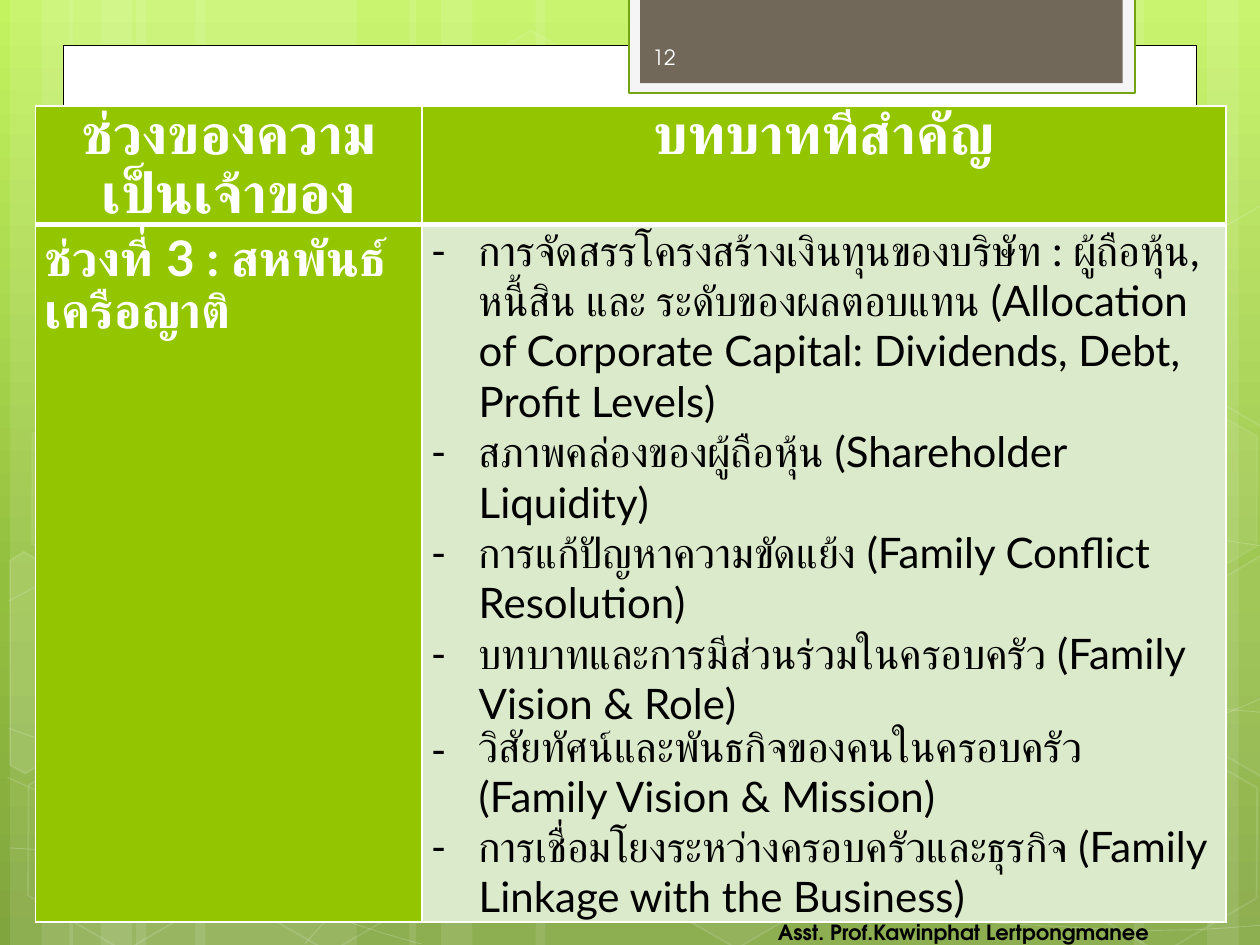
from lxml import etree
from pptx import Presentation
from pptx.dml.color import RGBColor
from pptx.enum.shapes import MSO_SHAPE
from pptx.enum.text import MSO_ANCHOR, PP_ALIGN
from pptx.oxml.ns import qn
from pptx.util import Inches, Pt

RECTANGLE, HEXAGON = MSO_SHAPE.RECTANGLE, MSO_SHAPE.HEXAGON
TOP, MIDDLE = MSO_ANCHOR.TOP, MSO_ANCHOR.MIDDLE
LEFT, CENTER, RIGHT = PP_ALIGN.LEFT, PP_ALIGN.CENTER, PP_ALIGN.RIGHT
WHITE, BLACK, GREEN, PALE_GREEN = "FFFFFF", "000000", "94C600", "DCEACC"
BODY_FONT, SMALL_FONT = "Lato", "TeX Gyre Adventor"

BACKGROUND_STOPS = [(0, "C3F35F"), (62, "93BF3F"), (100, "81A53E")]
STRIPES = [(1.08, 1.75, 0), (0.08, 0.5, 0), (0.33, 0.83, 0), (1.55, 1.75, 0), (0.55, 0.5, 0),
           (0.8, 0.83, 0), (7.33, 1.75, 180), (9.58, 0.5, 180), (9, 0.83, 180),
           (4.25, 3.08, 0), (3.25, 0.5, 0), (3.5, 0.83, 0)]
CURVES = [
    [(0.07, 6.73), (0.61, 6.76), (1.15, 6.79), (1.9, 6.78), (2.65, 6.77), (3.58, 6.75), (4.58, 6.65),
     (5.58, 6.55), (7, 6.36), (7.92, 6.17), (8.83, 5.98), (9.77, 5.68), (10.07, 5.51)],
    [(0.07, 4.77), (0.36, 4.61), (0.65, 4.46), (1.21, 4.31), (1.78, 4.16), (2.59, 3.94), (3.47, 3.87),
     (4.36, 3.8), (5.44, 3.79), (6.54, 3.87), (7.64, 3.95), (9.47, 4.26), (10.07, 4.34)],
    [(0.06, 6.17), (1.27, 6.72), (2.47, 7.27), (3.34, 7.49)],
    [(0.07, 5.78), (0.38, 5.89), (0.7, 6), (1.28, 6.16), (1.86, 6.31), (2.73, 6.56), (3.57, 6.73),
     (4.4, 6.9), (5.45, 7.08), (6.28, 7.18), (7.11, 7.29), (8, 7.33), (8.53, 7.36),
     (9.05, 7.4), (9.19, 7.38), (9.45, 7.38), (9.71, 7.37), (9.89, 7.35), (10.07, 7.34)],
    [(2.42, 7.49), (2.6, 7.29), (2.78, 7.09), (3.02, 6.91), (3.26, 6.73), (3.6, 6.53), (3.88, 6.39),
     (4.16, 6.25), (4.33, 6.19), (4.7, 6.09), (5.06, 5.99), (5.73, 5.85), (6.08, 5.78),
     (6.44, 5.71), (6.49, 5.71), (6.8, 5.69), (7.11, 5.66), (7.6, 5.63), (7.94, 5.62),
     (8.29, 5.61), (8.86, 5.62), (8.86, 5.62), (9.08, 5.62), (9.31, 5.62), (9.53, 5.62),
     (9.71, 5.63), (9.88, 5.64), (9.97, 5.65), (10.06, 5.66), (10.03, 5.65), (10.06, 5.66)],
]
HEXAGONS = [(3.34, 0.36, 4, 8), (4.97, 5.89, 6, 12), (0.11, 5.91, None, 12), (0.14, 3.12, 7, 8),
            (1.74, 5.92, None, 12), (7.53, 4.53, 10, 12), (8.34, 5.93, None, 12), (8.34, 3.14, 7, 8)]
CUT_HEXAGONS = [
    ([(0.08, 4.45), (0.19, 4.38), (0.96, 4.82), (0.95, 5.7), (0.2, 6.14), (0.08, 6.07)], 10),
    ([(9.26, 4.85), (10.01, 4.41), (10.09, 4.46), (10.09, 6.13), (10.02, 6.17), (9.26, 5.73)], 4),
    ([(9.26, 2.07), (10.01, 1.63), (10.1, 1.68), (10.09, 3.35), (10.02, 3.39), (9.26, 2.95)], None),
]
PANELS = [((0.5, 0.36, 9, 6.76), WHITE, (BLACK, 0.5)),
          ((4.99, -0.02, 4.02, 0.76), "F5F5F5", ("74A510", 1.25)),
          ((5.08, -0.02, 3.83, 0.68), "71685A", None)]
HEADERS = ["ช่วงของความเป็นเจ้าของ", "บทบาทที่สำคัญ"]
STAGE = "ช่วงที่ 3 : สหพันธ์เครือญาติ"
ROLES = [
    "การจัดสรรโครงสร้างเงินทุนของบริษัท : ผู้ถือหุ้น, หนี้สิน และ ระดับของผลตอบแทน "
    "(Allocation of Corporate Capital: Dividends, Debt, Profit Levels)",
    "สภาพคล่องของผู้ถือหุ้น (Shareholder Liquidity)",
    "การแก้ปัญหาความขัดแย้ง (Family Conflict Resolution)",
    "บทบาทและการมีส่วนร่วมในครอบครัว (Family Vision & Role)",
    "วิสัยทัศน์และพันธกิจของคนในครอบครัว (Family Vision & Mission)",
    "การเชื่อมโยงระหว่างครอบครัวและธุรกิจ (Family Linkage with the Business)",
]
COLUMN_WIDTHS, ROW_HEIGHTS = [3.07, 6.38], [0.84, 5.07]


def paint(fill, color):
    fill.solid()
    fill.fore_color.rgb = RGBColor.from_string(color)


def set_opacity(parent, opacity):
    color = parent.find(qn("a:solidFill")).find(qn("a:srgbClr"))
    etree.SubElement(color, qn("a:alpha"), val=str(opacity * 1000))


def style_shape(shape, fill=None, line=None, fill_opacity=None, line_opacity=None):
    shape.shadow.inherit = False
    properties = shape._element.spPr
    if fill:
        paint(shape.fill, fill)
        if fill_opacity:
            set_opacity(properties, fill_opacity)
    else:
        shape.fill.background()
    if line:
        color, width = line
        paint(shape.line.fill, color)
        shape.line.width = Pt(width)
        if line_opacity:
            set_opacity(properties.find(qn("a:ln")), line_opacity)
    else:
        shape.line.fill.background()


def add_preset(slide, preset, box):
    return slide.shapes.add_shape(preset, *map(Inches, box))


def add_outline(slide, points, close):
    points = [(Inches(x), Inches(y)) for x, y in points]
    builder = slide.shapes.build_freeform(*points[0])
    builder.add_line_segments(points[1:], close=close)
    return builder.convert_to_shape()


def add_curve(slide, points):
    shape = add_outline(slide, points, False)
    segments = list(shape._element.iter(qn("a:lnTo")))
    outline = segments[0].getparent()
    for start in range(0, len(segments), 3):
        curve = etree.SubElement(outline, qn("a:cubicBezTo"))
        for segment in segments[start:start + 3]:
            curve.append(segment[0])
            outline.remove(segment)
    return shape


def set_font(paragraph, name, size, color, bold):
    font = paragraph.font
    font.name, font.size, font.bold = name, Pt(size), bold
    font.color.rgb = RGBColor.from_string(color)


def add_label(slide, text, box, align, anchor, color, bold):
    frame = slide.shapes.add_textbox(*map(Inches, box)).text_frame
    frame.word_wrap = True
    frame.vertical_anchor = anchor
    if anchor == TOP:
        frame.margin_top = 0
    paragraph = frame.paragraphs[0]
    paragraph.text = text
    paragraph.alignment = align
    set_font(paragraph, SMALL_FONT, 12, color, bold)


def fill_cell(cell, texts, size, fill, color=WHITE, bold=True, align=LEFT, bottom=1, bullets=False):
    properties = cell._tc.get_or_add_tcPr()
    for side, width in (("L", 1), ("R", 1), ("T", 1), ("B", bottom)):
        border = etree.SubElement(properties, qn(f"a:ln{side}"), w=str(Pt(width)))
        solid = etree.SubElement(border, qn("a:solidFill"))
        etree.SubElement(solid, qn("a:srgbClr"), val=WHITE)
    paint(cell.fill, fill)
    cell.margin_left = cell.margin_right = Inches(0.07)
    cell.margin_top = cell.margin_bottom = 0
    frame = cell.text_frame
    frame.text = "\n".join(texts)
    for paragraph in frame.paragraphs:
        paragraph.alignment = align
        if bullets:
            layout = paragraph._p.get_or_add_pPr()
            layout.set("marL", str(Inches(0.38)))
            layout.set("indent", str(-Inches(0.38)))
            etree.SubElement(layout, qn("a:buFont"), typeface=BODY_FONT)
            etree.SubElement(layout, qn("a:buChar"), char="-")
        else:
            paragraph.line_spacing = 1.06
            paragraph.space_after = Pt(8)
        set_font(paragraph, BODY_FONT, size, color, bold)


def set_background(slide):
    fill = slide.background.fill
    fill.gradient()
    fill.gradient_angle = 270
    stops = next(slide._element.iter(qn("a:gsLst")))
    for stop in list(stops):
        stops.remove(stop)
    for position, color in BACKGROUND_STOPS:
        stop = etree.SubElement(stops, qn("a:gs"), pos=str(position * 1000))
        etree.SubElement(stop, qn("a:srgbClr"), val=color)


def add_backdrop(slide):
    for left, width, rotation in STRIPES:
        stripe = add_preset(slide, RECTANGLE, (left, 0, width, 7.5))
        stripe.rotation = rotation
        style_shape(stripe, WHITE, fill_opacity=10)
    for points in CURVES:
        style_shape(add_curve(slide, points), line=(WHITE, 0.5), line_opacity=20)
    for left, top, opacity, line_opacity in HEXAGONS:
        shape = add_preset(slide, HEXAGON, (left, top, 1.75, 1.52))
        shape.adjustments[0], shape.adjustments[1] = 0.285, 1.155
        shape.rotation = 30
        style_shape(shape, WHITE if opacity else None, (WHITE, 1), opacity, line_opacity)
    for points, opacity in CUT_HEXAGONS:
        style_shape(add_outline(slide, points, True), WHITE if opacity else None, (WHITE, 1), opacity, 12)
    for box, fill, line in PANELS:
        style_shape(add_preset(slide, RECTANGLE, box), fill, line)


def add_roles_table(slide):
    box = (0.28, 0.84, sum(COLUMN_WIDTHS), sum(ROW_HEIGHTS))
    table = slide.shapes.add_table(2, 2, *map(Inches, box)).table
    for column, width in zip(table.columns, COLUMN_WIDTHS):
        column.width = Inches(width)
    for row, height in zip(table.rows, ROW_HEIGHTS):
        row.height = Inches(height)
    for index, header in enumerate(HEADERS):
        fill_cell(table.cell(0, index), [header], 32, GREEN, align=CENTER, bottom=3)
    fill_cell(table.cell(1, 0), [STAGE], 28, GREEN)
    fill_cell(table.cell(1, 1), ROLES, 24, PALE_GREEN, BLACK, False, bullets=True)


presentation = Presentation()
presentation.slide_width, presentation.slide_height = Inches(10), Inches(7.5)
slide = presentation.slides.add_slide(presentation.slide_layouts[6])
set_background(slide)
add_backdrop(slide)
add_roles_table(slide)
add_label(slide, "Asst. Prof.Kawinphat Lertpongmanee", (5.39, 7.3, 3.83, 0.4), RIGHT, TOP, BLACK, True)
add_label(slide, "12", (5.08, 0.25, 1.46, 0.4), LEFT, MIDDLE, "FEFEFE", False)
presentation.save("out.pptx")
